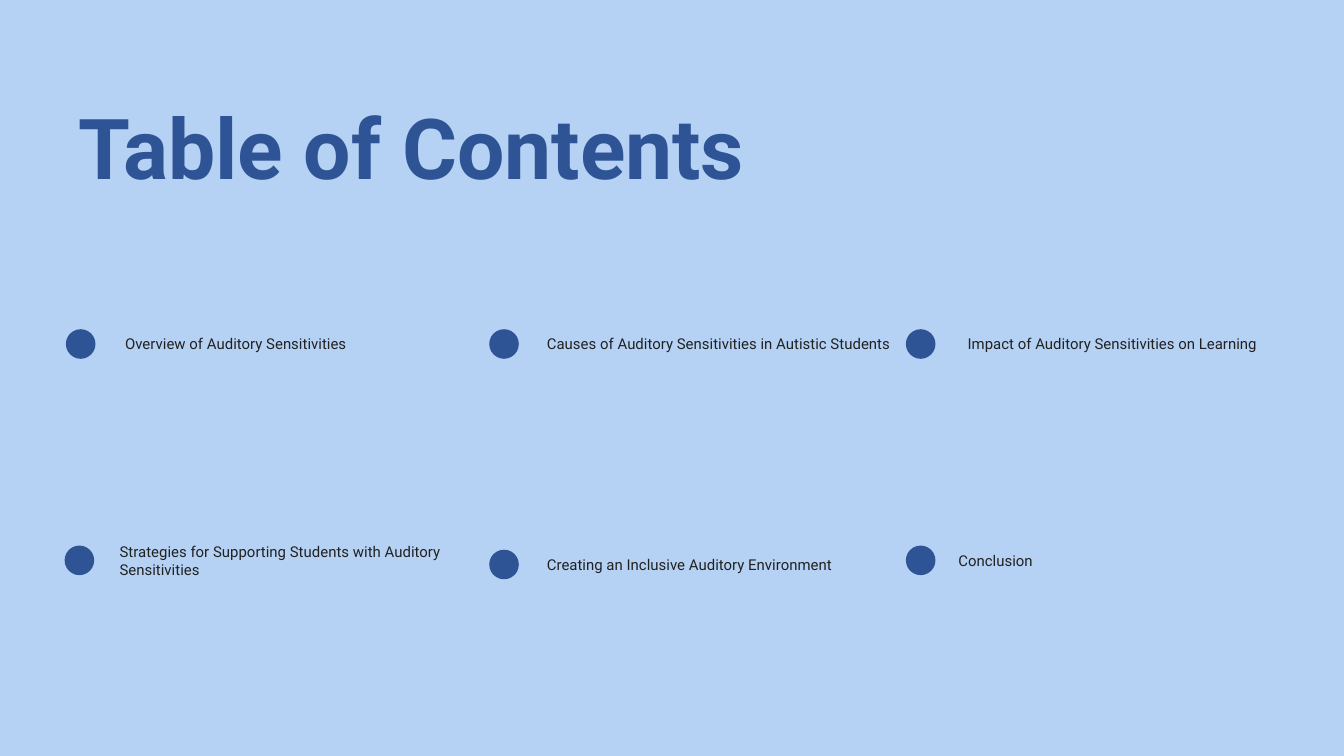
import pptx
import pptx.util
import pptx.dml.color
import pptx.enum.shapes
import pptx.enum.text

Pt = pptx.util.Pt
NAVY, INK, SKY = "2E5495", "212121", "B5D2F4"
FONT = "Roboto"
DOT = 15.84
ENTRY_WIDTH = 197.28
LINE_HEIGHT, TWO_LINE_HEIGHT = 17.28, 27.36

# Each entry: dot left, text left, vertical centre, text height, wording
ENTRIES = [
    (35.3, 63.4, 184.3, LINE_HEIGHT, "Overview of Auditory Sensitivities"),
    (262.1, 289.4, 184.3, LINE_HEIGHT, "Causes of Auditory Sensitivities in Autistic Students"),
    (485.3, 514.8, 184.3, LINE_HEIGHT, "Impact of Auditory Sensitivities on Learning"),
    (34.6, 60.5, 300.2, TWO_LINE_HEIGHT,
     "Strategies for Supporting Students with Auditory Sensitivities"),
    (262.1, 289.4, 302.4, LINE_HEIGHT, "Creating an Inclusive Auditory Environment"),
    (485.3, 509.8, 300.2, LINE_HEIGHT, "Conclusion"),
]


def color(value):
    return pptx.dml.color.RGBColor.from_string(value)


def add_text(s, left, top, width, height, text, size, ink, bold=False,
             anchor=pptx.enum.text.MSO_ANCHOR.TOP):
    sp = s.shapes.add_textbox(Pt(left), Pt(top), Pt(width), Pt(height))
    tf = sp.text_frame
    tf.word_wrap = True
    tf.auto_size = pptx.enum.text.MSO_AUTO_SIZE.SHAPE_TO_FIT_TEXT
    tf.vertical_anchor = anchor
    tf.margin_left = tf.margin_right = tf.margin_top = tf.margin_bottom = Pt(3.6)
    tf.text = text
    r = tf.paragraphs[0].runs[0]
    r.font.name = FONT
    r.font.size = Pt(size)
    r.font.bold = bold
    r.font.color.rgb = color(ink)


def add_dot(s, left, center):
    sp = s.shapes.add_shape(pptx.enum.shapes.MSO_SHAPE.OVAL,
                            Pt(left), Pt(center - DOT / 2), Pt(DOT), Pt(DOT))
    sp.shadow.inherit = False
    sp.fill.solid()
    sp.fill.fore_color.rgb = color(NAVY)
    sp.line.fill.background()


def add_entry(s, dot_left, text_left, center, height, text):
    add_dot(s, dot_left, center)
    add_text(s, text_left, center - height / 2, ENTRY_WIDTH, height, text, 8, INK,
             anchor=pptx.enum.text.MSO_ANCHOR.MIDDLE)


def main():
    prs = pptx.Presentation()
    prs.slide_width, prs.slide_height = Pt(720), Pt(405)
    s = prs.slides.add_slide(prs.slide_layouts[6])

    # Background
    s.background.fill.solid()
    s.background.fill.fore_color.rgb = color(SKY)

    # Title
    add_text(s, 38.2, 47.5, 668.9, 61.2, "Table of Contents", 45, NAVY, bold=True)

    # Contents
    for entry in ENTRIES:
        add_entry(s, *entry)

    prs.save("out.pptx")


if __name__ == "__main__":
    main()
